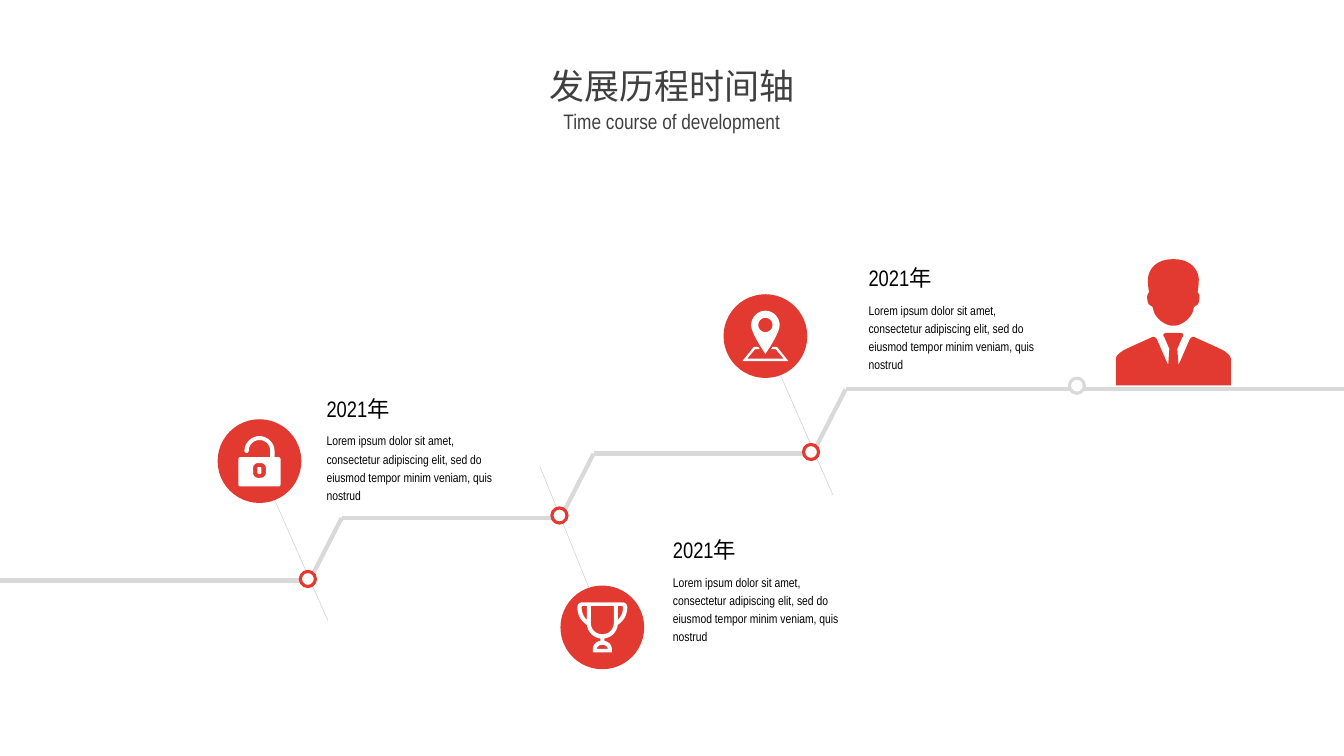
from dataclasses import dataclass

from lxml.etree import SubElement as SubEl
from pptx import Presentation as Deck
from pptx.dml.color import RGBColor as Rgb
from pptx.enum.shapes import MSO_CONNECTOR as Conn, MSO_SHAPE as Form
from pptx.enum.text import MSO_AUTO_SIZE as Fit, PP_ALIGN as Align
from pptx.oxml.ns import qn
from pptx.util import Cm, Pt


@dataclass(frozen=True)
class Theme:
    red: Rgb = Rgb(0xE2, 0x39, 0x31)
    track: Rgb = Rgb(0xD9, 0xD9, 0xD9)
    guide: Rgb = Rgb(0xBF, 0xBF, 0xBF)
    white: Rgb = Rgb(0xFF, 0xFF, 0xFF)
    black: Rgb = Rgb(0, 0, 0)
    gray: Rgb = Rgb(0x40, 0x40, 0x40)
    font: str = "Arial Narrow"
    title: float = 25
    sub: float = 15
    year: float = 16
    body: float = 9
    thick: float = 3
    ring: float = 2.25
    thin: float = 0.25


THEME = Theme()
LOREM = ("Lorem ipsum dolor sit amet, consectetur adipiscing elit, "
         "sed do eiusmod tempor minim veniam, quis nostrud")


def assign(target, values):
    for name, value in values.items():
        setattr(target, name, value)


def flatten(loop, steps=10):
    points = [loop[0]]
    for part in loop[1:]:
        if len(part) == 2:
            points.append(part)
            continue
        curve = [points[-1], part[:2], part[2:4], part[4:]]
        for step in range(1, steps + 1):
            t = step / steps
            rates = ((1 - t) ** 3, 3 * t * (1 - t) ** 2, 3 * t * t * (1 - t), t ** 3)
            points.append(tuple(sum(r * p[axis] for r, p in zip(rates, curve))
                                for axis in (0, 1)))
    return points


def flip(points):
    return [(-x, y) for x, y in reversed(points)]


def mirror(loop):
    half = flatten(loop)
    return half + flip(half)


def rounded(half, top, base, bend):
    pull = 0.45 * bend
    return mirror([
        (0, top), (half - bend, top),
        (half - pull, top, half, top + pull, half, top + bend),
        (half, base - bend),
        (half, base - pull, half - pull, base, half - bend, base),
        (0, base)])


def lock():
    shackle = [
        (0.27, -0.1), (0.27, -0.26),
        (0.27, -0.41, 0.15, -0.53, 0, -0.53),
        (-0.15, -0.53, -0.27, -0.41, -0.27, -0.26),
        (-0.27, -0.19, -0.38, -0.19, -0.38, -0.26),
        (-0.38, -0.46, -0.2, -0.63, 0, -0.63),
        (0.2, -0.63, 0.38, -0.46, 0.38, -0.26), (0.38, -0.1)]
    return [flatten(shackle), rounded(0.53, -0.1, 0.64, 0.05),
            rounded(0.16, 0.05, 0.42, 0.12), rounded(0.05, 0.15, 0.32, 0.03)]


def trophy():
    cup = [
        (0, -0.63), (0.5, -0.63),
        (0.58, -0.63, 0.63, -0.58, 0.63, -0.5),
        (0.62, -0.3, 0.55, -0.18, 0.39, -0.06),
        (0.36, 0.12, 0.24, 0.25, 0.05, 0.28), (0.05, 0.34),
        (0.17, 0.36, 0.24, 0.45, 0.24, 0.55), (0.24, 0.63), (0, 0.63)]
    bowl = [(0, -0.54), (0.29, -0.54), (0.29, -0.11),
            (0.28, 0.06, 0.17, 0.17, 0, 0.17)]
    foot = [(0, 0.44), (0.08, 0.44, 0.13, 0.49, 0.14, 0.54), (0, 0.54)]
    ear = flatten([(0.39, -0.54), (0.48, -0.54),
                   (0.52, -0.54, 0.52, -0.52, 0.52, -0.49),
                   (0.52, -0.37, 0.47, -0.27, 0.39, -0.19)])
    return [mirror(cup), mirror(bowl), mirror(foot), ear, flip(ear)]


def pin():
    drop = [(0, -0.64), (0.2, -0.64, 0.36, -0.47, 0.36, -0.27),
            (0.36, -0.07, 0, 0.45, 0, 0.45)]
    ground = [(0, 0.57), (0.46, 0.57), (0.26, 0.33), (0.14, 0.33),
              (0.18, 0.27), (0.29, 0.27), (0.58, 0.63), (0, 0.63)]
    return [mirror(drop), rounded(0.18, -0.46, -0.1, 0.18), mirror(ground)]


def person():
    head = [
        (0, -1.59), (0.56, -1.59, 0.66, -1.18, 0.64, -1.03),
        (0.64, -0.9, 0.61, -0.75, 0.61, -0.75),
        (0.61, -0.75, 0.66, -0.72, 0.66, -0.62),
        (0.64, -0.34, 0.53, -0.47, 0.51, -0.34),
        (0.48, -0.14, 0.3, -0.01, 0.2, 0.04),
        (0.13, 0.07, 0.08, 0.09, 0, 0.09)]
    suit = [
        (0, 0.27), (0.18, 0.27),
        (0.23, 0.27, 0.28, 0.32, 0.23, 0.37), (0.1, 0.67), (0.13, 1.08),
        (0.2, 0.93, 0.33, 0.62, 0.41, 0.44),
        (0.43, 0.4, 0.46, 0.37, 0.51, 0.37),
        (0.54, 0.37, 0.56, 0.39, 0.56, 0.39),
        (0.56, 0.39, 0.97, 0.57, 1.24, 0.7),
        (1.37, 0.78, 1.45, 0.85, 1.45, 0.94), (1.45, 1.59), (0, 1.59)]
    return [mirror(head), mirror(suit)]


def paint(shape, fill, line=None):
    shape.shadow.inherit = False
    shape.fill.solid()
    shape.fill.fore_color.rgb = fill
    if line is None:
        shape.line.fill.background()
    else:
        shape.line.color.rgb = line
        shape.line.width = Pt(THEME.ring)


def add_icon(slide, center, loops, color):
    paths = [[(Cm(center[0] + x), Cm(center[1] + y)) for x, y in loop]
             for loop in loops]
    pen = slide.shapes.build_freeform(*paths[0][0])
    pen.add_line_segments(paths[0][1:], close=True)
    for path in paths[1:]:
        pen.move_to(*path[0])
        pen.add_line_segments(path[1:], close=True)
    paint(pen.convert_to_shape(), color)


def add_disc(slide, center, size, fill, line=None):
    left, top = (Cm(value - size / 2) for value in center)
    disc = slide.shapes.add_shape(Form.OVAL, left, top, Cm(size), Cm(size))
    paint(disc, fill, line)


def add_line(slide, start, end, color, width):
    line = slide.shapes.add_connector(
        Conn.STRAIGHT, *(Cm(value) for value in (*start, *end)))
    line.line.color.rgb = color
    line.line.width = Pt(width)
    SubEl(line._element.spPr, qn("a:effectLst"))


def add_text(slide, box, text, size, color, **layout):
    frame = slide.shapes.add_textbox(*(Cm(value) for value in box)).text_frame
    assign(frame, {"word_wrap": True, "auto_size": Fit.SHAPE_TO_FIT_TEXT})
    para = frame.paragraphs[0]
    assign(para, layout)
    run = para.add_run()
    run.text = text
    assign(run.font, {"name": THEME.font, "size": Pt(size)})
    run.font.color.rgb = color


def add_track(slide, width, count):
    start, level = 0, 14.63
    for step in range(count):
        x, y = 7.75 + 6.35 * step, 14.73 - 1.62 * step
        add_line(slide, (start, level), (x, level), THEME.track, THEME.thick)
        start, level = x + 0.86, y - 1.68
        add_line(slide, (x, y), (start, level), THEME.track, THEME.thick)
    add_line(slide, (start, level), (width, level), THEME.track, THEME.thick)


def add_stop(slide, step, badge, tail, icon, note):
    node = (7.76 + 6.34 * step, 14.59 - 1.6 * step)
    side = 1 if badge[1] < node[1] else -1
    add_line(slide, (node[0] + tail[0], node[1] + tail[1]),
             (badge[0] - 0.2 * side, badge[1] - 0.34 * side),
             THEME.guide, THEME.thin)
    add_disc(slide, node, 0.38, THEME.white, THEME.red)
    add_disc(slide, badge, 2.11, THEME.red)
    add_icon(slide, badge, icon, THEME.white)
    left, top = note
    add_text(slide, (left, top + 0.89, 5, 1.6), LOREM, THEME.body, THEME.black,
             line_spacing=1.2)
    add_text(slide, (left, top, 3.23, 0.94), "2021年", THEME.year, THEME.black)


def main():
    deck = Deck()
    width = 33.87
    assign(deck, {"slide_width": Cm(width), "slide_height": Cm(19.05)})
    slide = deck.slides.add_slide(deck.slide_layouts[6])
    stops = [
        ((6.54, 11.62), (0.5, 1.04), lock(), (7.98, 9.83)),
        ((15.18, 15.81), (-0.49, -1.23), trophy(), (16.71, 13.39)),
        ((19.29, 8.47), (0.55, 1.08), pin(), (21.64, 6.53)),
    ]
    add_track(slide, width, len(stops))
    add_disc(slide, (27.14, 9.72), 0.38, THEME.white, THEME.track)
    for step, stop in enumerate(stops):
        add_stop(slide, step, *stop)
    add_icon(slide, (29.57, 8.12), person(), THEME.red)
    add_text(slide, (12.67, 1.5, 8.53, 1.32), "发展历程时间轴",
             THEME.title, THEME.gray, alignment=Align.CENTER)
    add_text(slide, (11.33, 2.62, 11.2, 0.89), "Time course of development",
             THEME.sub, THEME.gray, alignment=Align.CENTER)
    deck.save("out.pptx")


if __name__ == "__main__":
    main()
